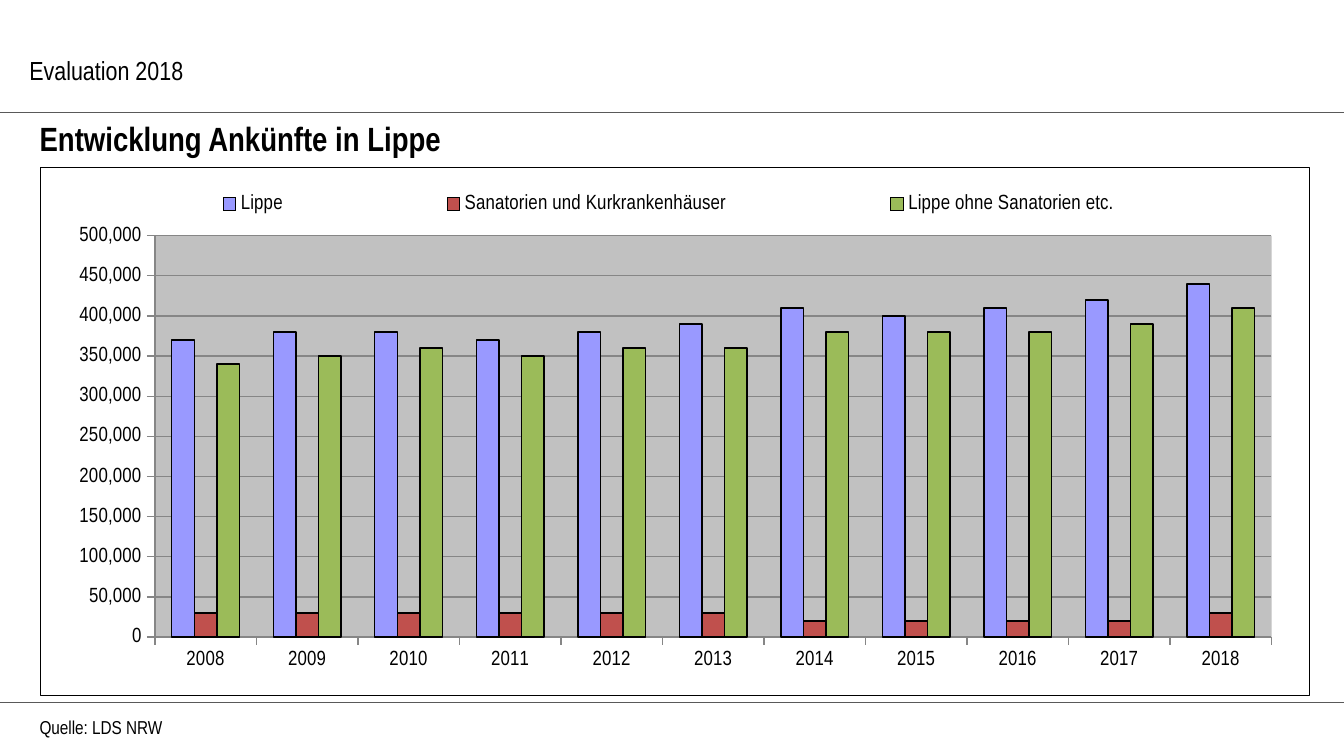
from lxml import etree
from pptx import Presentation
from pptx.chart.data import CategoryChartData
from pptx.dml.color import RGBColor
from pptx.enum.chart import XL_CHART_TYPE, XL_LEGEND_POSITION, XL_TICK_MARK
from pptx.enum.shapes import MSO_CONNECTOR
from pptx.enum.text import MSO_ANCHOR, PP_ALIGN
from pptx.oxml import parse_xml
from pptx.oxml.ns import nsdecls, qn
from pptx.util import Cm, Pt

COLUMNS = XL_CHART_TYPE.COLUMN_CLUSTERED
RIGHT = XL_LEGEND_POSITION.RIGHT
OUTSIDE = XL_TICK_MARK.OUTSIDE
STRAIGHT = MSO_CONNECTOR.STRAIGHT
TOP = MSO_ANCHOR.TOP
LEFT = PP_ALIGN.LEFT

FONT = "Arial Narrow"
BLACK, RULE_GREY, AXIS_GREY, PLOT_GREY = "000000", "595959", "868686", "C1C1C1"

YEARS = [str(year) for year in range(2008, 2019)]
# Arrivals in thousands, with the bar colour
ARRIVALS = [
    ("Lippe", "9999FF",
     [370, 380, 380, 370, 380, 390, 410, 400, 410, 420, 440]),
    ("Sanatorien und Kurkrankenhäuser", "C0504D",
     [30, 30, 30, 30, 30, 30, 20, 20, 20, 20, 30]),
    ("Lippe ohne Sanatorien etc.", "9BBB59",
     [340, 350, 360, 350, 360, 360, 380, 380, 380, 390, 410]),
]


def rgb(value):
    return RGBColor.from_string(value)


def manual_layout(x, y, w, h, inner=False):
    target = '<c:layoutTarget val="inner"/>' if inner else ""
    return parse_xml(
        f'<c:layout {nsdecls("c")}><c:manualLayout>{target}'
        '<c:xMode val="edge"/><c:yMode val="edge"/>'
        f'<c:x val="{x}"/><c:y val="{y}"/><c:w val="{w}"/><c:h val="{h}"/>'
        '</c:manualLayout></c:layout>')


def shape_properties(fill, line=None):
    outline = (f'<a:ln w="{Pt(0.5)}"><a:solidFill><a:srgbClr val="{line}"/>'
               '</a:solidFill></a:ln>' if line else "<a:ln><a:noFill/></a:ln>")
    return parse_xml(
        f'<c:spPr {nsdecls("c", "a")}><a:solidFill><a:srgbClr val="{fill}"/>'
        f'</a:solidFill>{outline}</c:spPr>')


class SlideBuilder:
    def __init__(self, s):
        self.s = s

    def style_text(self, sp, text, size, bold=False):
        tf = sp.text_frame
        tf.text = text
        tf.word_wrap = True
        tf.vertical_anchor = TOP
        p = tf.paragraphs[0]
        p.alignment = LEFT
        font = p.runs[0].font
        font.name, font.size, font.bold = FONT, Pt(size), bold
        font.color.rgb = rgb(BLACK)

    def title(self, text, x, y, w, h, size):
        sp = self.s.shapes.title
        sp.left, sp.top, sp.width, sp.height = Cm(x), Cm(y), Cm(w), Cm(h)
        self.style_text(sp, text, size)

    def text(self, text, x, y, w, h, size, bold=False):
        sp = self.s.shapes.add_textbox(Cm(x), Cm(y), Cm(w), Cm(h))
        self.style_text(sp, text, size, bold)

    def rule(self, x1, x2, y):
        line = self.s.shapes.add_connector(STRAIGHT, Cm(x1), Cm(y), Cm(x2), Cm(y))
        line.line.color.rgb = rgb(RULE_GREY)
        line.line.width = Pt(0.5)
        etree.SubElement(line._element.spPr, qn("a:effectLst"))

    def column_chart(self, x, y, w, h):
        data = CategoryChartData(number_format="#,##0")
        data.categories = YEARS
        for name, _, thousands in ARRIVALS:
            data.add_series(name, [value * 1000 for value in thousands])
        chart = self.s.shapes.add_chart(
            COLUMNS, Cm(x), Cm(y), Cm(w), Cm(h), data).chart
        chart.has_title = False
        chart.font.name, chart.font.size = FONT, Pt(11)
        chart.font.color.rgb = rgb(BLACK)

        # Columns
        plot = chart.plots[0]
        plot.gap_width, plot.overlap = 150, 0
        plot.vary_by_categories = False
        for series, (_, color, _) in zip(plot.series, ARRIVALS):
            series.format.fill.solid()
            series.format.fill.fore_color.rgb = rgb(color)
            series.format.line.color.rgb = rgb(BLACK)
            series.format.line.width = Pt(0.75)

        # Axes
        values = chart.value_axis
        values.minimum_scale, values.maximum_scale = 0, 500000
        values.major_unit = 50000
        values.has_major_gridlines = True
        values.tick_labels.number_format = "#,##0"
        values.tick_labels.number_format_is_linked = False
        for axis in (chart.category_axis, values):
            axis.major_tick_mark = OUTSIDE
            axis.format.line.color.rgb = rgb(AXIS_GREY)
        values.major_gridlines.format.line.color.rgb = rgb(AXIS_GREY)

        # Legend spread across the top
        chart.has_legend = True
        legend = chart.legend
        legend.position = RIGHT
        legend.include_in_layout = False
        legend_xml = legend._element
        for old in legend_xml.findall(qn("c:layout")):
            legend_xml.remove(old)
        legend_xml.find(qn("c:legendPos")).addnext(
            manual_layout(0.02, 0.03, 0.95, 0.08))

        # Plot area and frame
        space = chart._chartSpace
        area = space.chart.plotArea
        for old in area.findall(qn("c:layout")):
            area.remove(old)
        area.insert(0, manual_layout(0.09, 0.13, 0.88, 0.76, inner=True))
        area.append(shape_properties(PLOT_GREY))
        space.chart.addnext(shape_properties("FFFFFF", BLACK))


def main():
    prs = Presentation()
    prs.slide_width, prs.slide_height = Cm(25.4), Cm(14.29)
    s = prs.slides.add_slide(prs.slide_layouts[5])
    builder = SlideBuilder(s)

    # Header and footer rules
    builder.rule(-0.1, 25.4, 13.28)
    builder.rule(0, 25.4, 2.13)

    # Headings and source
    builder.title("Evaluation 2018", 0.3, 0.9, 24.6, 1.62, 14)
    builder.text("Entwicklung Ankünfte in Lippe", 0.5, 2.1, 24, 1.02, 18, bold=True)
    builder.text("Quelle: LDS NRW", 0.5, 13.41, 3.6, 0.69, 10)

    # Arrivals by year
    builder.column_chart(0.76, 3.15, 24, 10)

    prs.save("out.pptx")


if __name__ == "__main__":
    main()
